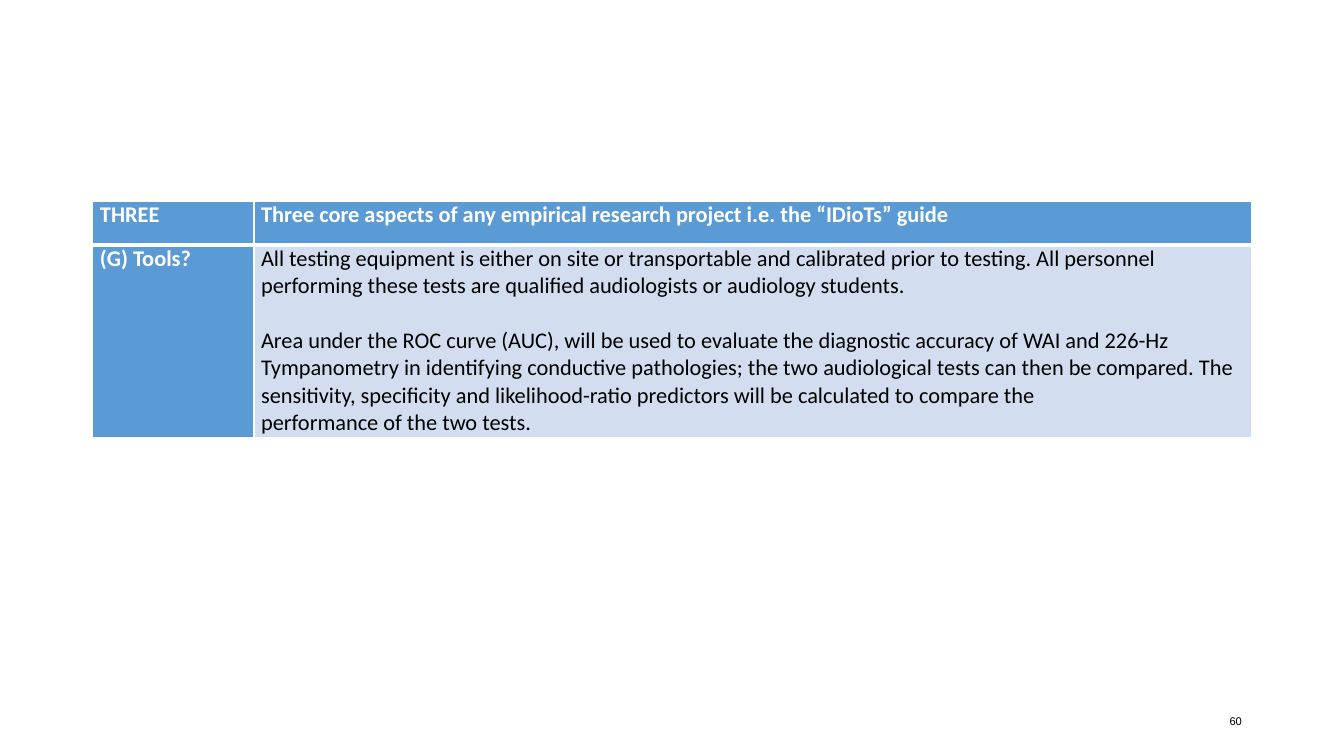
from dataclasses import dataclass

from lxml.etree import SubElement
from pptx import Presentation
from pptx.dml.color import RGBColor
from pptx.enum.text import MSO_ANCHOR, PP_ALIGN
from pptx.oxml.ns import qn
from pptx.util import Cm, Pt

HEADING = ["THREE", "Three core aspects of any empirical research project i.e. the “IDioTs” guide"]
QUESTION = "(G) Tools?"
ANSWER = [
    "All testing equipment is either on site or transportable and calibrated prior to testing. "
    "All personnel performing these tests are qualified audiologists or audiology students.",
    "Area under the ROC curve (AUC), will be used to evaluate the diagnostic accuracy of WAI and "
    "226-Hz Tympanometry in identifying conductive pathologies; the two audiological tests can then "
    "be compared. The sensitivity, specificity and likelihood-ratio predictors will be calculated "
    "to compare the",
    "performance of the two tests.",
]
GUIDE = [HEADING, [QUESTION, "\n".join(ANSWER)]]
PAGE_NUMBER = "60"

COLUMN_WIDTHS = [Cm(4.06), Cm(25.15)]
ROW_HEIGHTS = [Cm(1.09), Cm(4.85)]


@dataclass(frozen=True)
class Theme:
    accent: str = "5B9BD5"
    tint: str = "D2DEEF"
    light: str = "FFFFFF"
    dark: str = "000000"
    table_font: str = "Calibri"
    number_font: str = "Arial"
    table_size: int = 16
    number_size: int = 8
    rule: int = 1
    heading_rule: int = 3


THEME = Theme()


def style_text(paragraph, font_name, size, color, bold=False):
    for run in paragraph.runs:
        run.font.name = font_name
        run.font.size = Pt(size)
        run.font.bold = bold
        run.font.color.rgb = RGBColor.from_string(color)


def add_borders(cell, top, bottom):
    """Draw the four cell edges; top and bottom are widths in points."""
    edges = {"a:lnL": THEME.rule, "a:lnR": THEME.rule, "a:lnT": top, "a:lnB": bottom}
    properties = cell._tc.get_or_add_tcPr()
    for tag, width in edges.items():
        edge = SubElement(properties, qn(tag), w=str(Pt(width)))
        SubElement(SubElement(edge, qn("a:solidFill")), qn("a:srgbClr"), val=THEME.light)


def add_guide_table(slide):
    table = slide.shapes.add_table(
        len(GUIDE), len(HEADING), Cm(2.34), Cm(5.08), sum(COLUMN_WIDTHS), sum(ROW_HEIGHTS)
    ).table
    for column, width in zip(table.columns, COLUMN_WIDTHS):
        column.width = width
    for row, height in zip(table.rows, ROW_HEIGHTS):
        row.height = height

    for row_index, row_texts in enumerate(GUIDE):
        for column_index, wording in enumerate(row_texts):
            is_heading = row_index == 0
            is_label = is_heading or column_index == 0
            cell = table.cell(row_index, column_index)
            cell.margin_left = cell.margin_right = Cm(0.18)
            cell.margin_top = cell.margin_bottom = 0
            add_borders(
                cell,
                THEME.rule if is_heading else THEME.heading_rule,
                THEME.heading_rule if is_heading else THEME.rule,
            )
            cell.fill.solid()
            cell.fill.fore_color.rgb = RGBColor.from_string(THEME.accent if is_label else THEME.tint)
            cell.text_frame.text = wording
            for paragraph in cell.text_frame.paragraphs:
                style_text(paragraph, THEME.table_font, THEME.table_size,
                           THEME.light if is_label else THEME.dark, is_label)

    answer_paragraphs = table.cell(1, 1).text_frame.paragraphs
    answer_paragraphs[1].space_before = Pt(19.5)


def add_page_number(slide):
    frame = slide.shapes.add_textbox(Cm(23.93), Cm(17.65), Cm(7.62), Cm(1.02)).text_frame
    frame.word_wrap = True
    frame.vertical_anchor = MSO_ANCHOR.MIDDLE
    frame.text = PAGE_NUMBER
    number = frame.paragraphs[0]
    number.alignment = PP_ALIGN.RIGHT
    style_text(number, THEME.number_font, THEME.number_size, THEME.dark)


def main():
    presentation = Presentation()
    presentation.slide_width = Cm(33.87)
    presentation.slide_height = Cm(19.05)
    slide = presentation.slides.add_slide(presentation.slide_layouts[6])
    add_guide_table(slide)
    add_page_number(slide)
    presentation.save("out.pptx")


if __name__ == "__main__":
    main()
